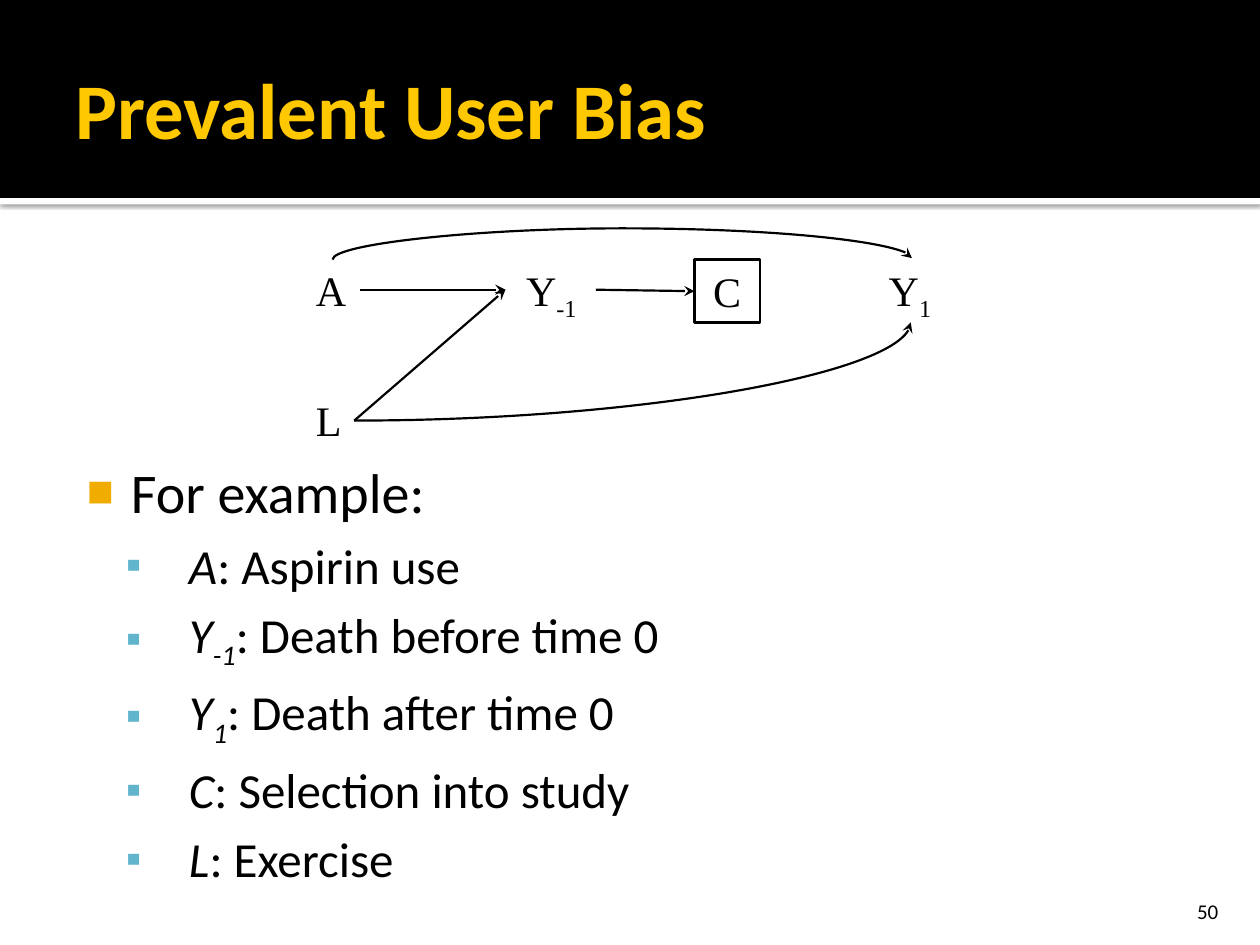
"""Build the slide on prevalent user bias with its causal diagram."""
from lxml import etree
from pptx import Presentation
from pptx import util as u
from pptx.dml.color import RGBColor
from pptx.enum import shapes, text
from pptx.oxml import parse_xml
from pptx.oxml.ns import nsdecls, qn


def color(value):
    return RGBColor.from_string(value)


def add_runs(paragraph, pieces, size, font, italic=False):
    for content, is_symbol, baseline in pieces:
        run = paragraph.add_run()
        run.text = content
        run.font.size = u.Pt(size)
        run.font.name = font
        run.font.color.rgb = color("000000")
        run.font.italic = italic and is_symbol
        if baseline:
            run.font._element.set("baseline", str(baseline))


presentation = Presentation()
presentation.slide_width = u.Cm(25.4)
presentation.slide_height = u.Cm(19.05)
slide = presentation.slides.add_slide(presentation.slide_layouts[6])

bands = []
for top, height, fill in [(3.99, 0.13, "FFFFFF"), (0, 3.99, "000000")]:
    band = slide.shapes.add_shape(
        shapes.MSO_SHAPE.RECTANGLE, u.Cm(0), u.Cm(top), u.Cm(25.4), u.Cm(height))
    band.shadow.inherit = False
    band.fill.solid()
    band.fill.fore_color.rgb = color(fill)
    band.line.fill.background()
    bands.append(band)
effects = bands[0]._element.spPr.find(qn("a:effectLst"))
effects.append(parse_xml(
    f'<a:outerShdw {nsdecls("a")} blurRad="31750" dist="10160" dir="5400000">'
    '<a:srgbClr val="000000"><a:alpha val="60000"/></a:srgbClr></a:outerShdw>'))

title = slide.shapes.add_textbox(u.Cm(1.27), u.Cm(0.43), u.Cm(22.86), u.Cm(3.48))
frame = title.text_frame
frame.word_wrap = True
frame.vertical_anchor = text.MSO_ANCHOR.MIDDLE
frame.margin_right = u.Cm(0.13)
frame.text = "Prevalent User Bias"
font = frame.paragraphs[0].runs[0].font
font.size, font.name, font.bold = u.Pt(45), "Calibri", True
font.color.rgb = color("FFC800")

number = slide.shapes.add_textbox(u.Cm(22.78), u.Cm(17.98), u.Cm(2.03), u.Cm(0.76))
number.text_frame.word_wrap = True
paragraph = number.text_frame.paragraphs[0]
paragraph.alignment = text.PP_ALIGN.RIGHT
paragraph.space_before = u.Pt(2)
add_runs(paragraph, [("50", False, 0)], 12, "Calibri")

body = slide.shapes.add_textbox(u.Cm(1.27), u.Cm(8.97), u.Cm(22.86), u.Cm(8.81))
frame = body.text_frame
frame.word_wrap = True
frame.margin_left, frame.margin_top = u.Cm(0.15), u.Cm(0.25)
definitions = [
    ("", "", "For example:"),
    ("A", "", ": Aspirin use"),
    ("Y", "-1", ": Death before time 0"),
    ("Y", "1", ": Death after time 0"),
    ("C", "", ": Selection into study"),
    ("L", "", ": Exercise"),
]
for index, (symbol, subscript, meaning) in enumerate(definitions):
    paragraph = frame.add_paragraph() if index else frame.paragraphs[0]
    paragraph.level = 1 if index else 0
    paragraph.space_before = u.Pt(6 if index else 0)
    margin, indent, bullet, bullet_color, bullet_size, size = (
        (2.39, -1.27, "▪", "60B5CC", 90, 28) if index
        else (1.22, -0.89, "■", "F0AD00", 80, 32))
    properties = paragraph._p.get_or_add_pPr()
    properties.set("marL", str(u.Cm(margin)))
    properties.set("indent", str(u.Cm(indent)))
    bullet_tint = etree.SubElement(properties, qn("a:buClr"))
    etree.SubElement(bullet_tint, qn("a:srgbClr"), val=bullet_color)
    etree.SubElement(properties, qn("a:buSzPct"), val=str(bullet_size * 1000))
    etree.SubElement(properties, qn("a:buFont"), typeface="Arial")
    etree.SubElement(properties, qn("a:buChar"), char=bullet)
    pieces = [(symbol, True, 0), (subscript, True, -25000), (meaning, False, 0)]
    add_runs(paragraph, [piece for piece in pieces if piece[0]], size, "Calibri", True)

nodes = [
    ("A", "", 6.12, 5.21, 1.14, False),
    ("Y", "-1", 10.19, 5.21, 1.85, True),
    ("C", "", 14.0, 5.23, 1.32, True),
    ("L", "", 6.12, 7.82, 1.02, False),
    ("Y", "1", 17.42, 5.21, 1.85, True),
]
for symbol, subscript, left, top, width, centered in nodes:
    node = slide.shapes.add_textbox(u.Cm(left), u.Cm(top), u.Cm(width), u.Cm(1.27))
    node.text_frame.word_wrap = centered
    paragraph = node.text_frame.paragraphs[0]
    paragraph.alignment = text.PP_ALIGN.CENTER if centered else text.PP_ALIGN.LEFT
    paragraph.space_before = u.Pt(3)
    pieces = [(symbol, False, 0), (subscript, False, -25000)]
    add_runs(paragraph, [piece for piece in pieces if piece[0]], 24, "Times New Roman")
    if symbol == "C":
        node.line.color.rgb = color("000000")
        node.line.width = u.Pt(1.5)

arrows = [
    ("line", 7.26, 5.84, 10.19, 5.84),
    ("line", 7.14, 8.48, 10.19, 5.84),
    ("line", 12.01, 5.84, 14.0, 5.87),
    ("curvedConnector2", 7.14, 8.48, 18.36, 6.5),
    ("curvedConnector3", 12.56, 11.06, 12.53, -0.62),
]
for preset, *ends in arrows:
    arrow = slide.shapes.add_connector(
        shapes.MSO_CONNECTOR.STRAIGHT, *[u.Cm(end) for end in ends])
    arrow.line.color.rgb = color("000000")
    arrow.line.width = u.Pt(1.25)
    properties = arrow._element.spPr
    geometry = properties.find(qn("a:prstGeom"))
    geometry.set("prst", preset)
    if preset == "curvedConnector3":
        properties.find(qn("a:xfrm")).set("rot", "5400000")
        adjustments = geometry.get_or_add_avLst()
        etree.SubElement(adjustments, qn("a:gd"), name="adj1", fmla="val 2100000")
    etree.SubElement(properties.find(qn("a:ln")), qn("a:tailEnd"), type="stealth")
    etree.SubElement(properties, qn("a:effectLst"))

presentation.save("out.pptx")
